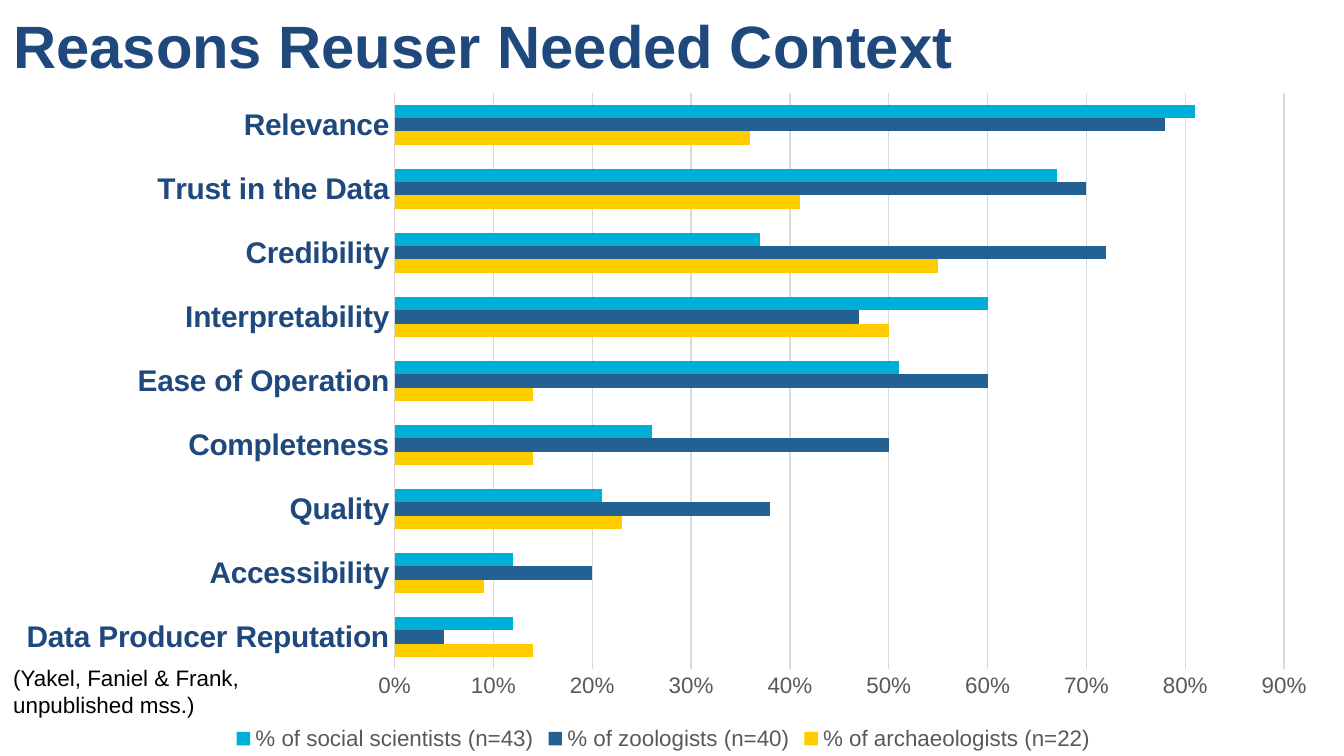
import dataclasses

import pptx
import pptx.chart.data
import pptx.dml.color
import pptx.enum.chart
import pptx.util

Inches = pptx.util.Inches
Pt = pptx.util.Pt

SLIDE_WIDTH = 10
SLIDE_HEIGHT = SLIDE_WIDTH * 9 / 16


@dataclasses.dataclass(frozen=True)
class Theme:
    """Colours, font and type sizes of the slide."""
    font: str = "Arial"
    navy: str = "1F497D"
    black: str = "000000"
    grey: str = "595959"
    rule: str = "D9D9D9"
    yellow: str = "FFCC00"
    blue: str = "236192"
    cyan: str = "00AFD7"
    title: int = 32
    category: int = 16
    small: int = 12
    base: int = 10


THEME = Theme()
REASONS = ["Data Producer Reputation", "Accessibility", "Quality", "Completeness",
           "Ease of Operation", "Interpretability", "Credibility",
           "Trust in the Data", "Relevance"]
GROUPS = [
    ("% of archaeologists (n=22) ", THEME.yellow,
     [0.14, 0.09, 0.23, 0.14, 0.14, 0.5, 0.55, 0.41, 0.36]),
    ("% of zoologists (n=40)", THEME.blue,
     [0.05, 0.2, 0.38, 0.5, 0.6, 0.47, 0.72, 0.7, 0.78]),
    ("% of social scientists (n=43)", THEME.cyan,
     [0.12, 0.12, 0.21, 0.26, 0.51, 0.6, 0.37, 0.67, 0.81]),
]


def rgb(code):
    """Return the colour for a hex code."""
    return pptx.dml.color.RGBColor.from_string(code)


def style_font(font, size, color, bold=False):
    """Apply the theme font with a size, colour and weight."""
    font.name = THEME.font
    font.size = Pt(size)
    font.bold = bold
    font.color.rgb = rgb(color)


def add_text(slide, box, text, size=THEME.small, color=THEME.black, bold=False, wrap=True):
    """Place one formatted paragraph in a box given in inches."""
    frame = slide.shapes.add_textbox(*map(Inches, box)).text_frame
    frame.word_wrap = wrap
    run = frame.paragraphs[0].add_run()
    run.text = text
    style_font(run.font, size, color, bold)


def style_axes(chart):
    """Format the reason axis and the percentage axis."""
    reasons, share = chart.category_axis, chart.value_axis
    for axis in (reasons, share):
        axis.major_tick_mark = pptx.enum.chart.XL_TICK_MARK.NONE
        axis.minor_tick_mark = pptx.enum.chart.XL_TICK_MARK.NONE
    style_font(reasons.tick_labels.font, THEME.category, THEME.navy, bold=True)
    style_font(share.tick_labels.font, THEME.small, THEME.grey)
    share.minimum_scale, share.maximum_scale, share.major_unit = 0, 0.9, 0.1
    share.tick_labels.number_format = "0%"
    share.tick_labels.number_format_is_linked = False
    share.format.line.fill.background()
    share.has_major_gridlines = True
    for line in (reasons.format.line, share.major_gridlines.format.line):
        line.color.rgb = rgb(THEME.rule)
        line.width = Pt(0.75)


def add_reason_chart(slide, box):
    """Draw the clustered bars of reasons by discipline in a box."""
    data = pptx.chart.data.CategoryChartData(number_format="0%")
    data.categories = REASONS
    for name, _, shares in GROUPS:
        data.add_series(name, shares)
    chart = slide.shapes.add_chart(
        pptx.enum.chart.XL_CHART_TYPE.BAR_CLUSTERED, *map(Inches, box), data).chart
    style_font(chart.font, THEME.base, THEME.black)
    chart.has_title = False
    style_axes(chart)

    plot = chart.plots[0]
    plot.gap_width = 182
    plot.overlap = 0
    plot.vary_by_categories = False
    for bars, (_, color, _) in zip(plot.series, GROUPS):
        bars.format.fill.solid()
        bars.format.fill.fore_color.rgb = rgb(color)

    chart.has_legend = True
    chart.legend.position = pptx.enum.chart.XL_LEGEND_POSITION.BOTTOM
    chart.legend.include_in_layout = False
    style_font(chart.legend.font, THEME.small, THEME.grey)


def add_context_slide(deck, box):
    """Lay out the chart, title and citation within a box."""
    slide = deck.slides.add_slide(deck.slide_layouts[6])
    left, top, width, height = box
    add_reason_chart(slide, (left, top + 0.59, width - 0.08, height - 0.59))
    add_text(slide, (left, top + 0.02, 7.25, 0.64), "Reasons Reuser Needed Context",
             size=THEME.title, color=THEME.navy, bold=True, wrap=False)
    add_text(slide, (left, top + 4.89, 2.2, 0.5),
             "(Yakel, Faniel & Frank, unpublished mss.)")


def main():
    """Build and save the deck."""
    deck = pptx.Presentation()
    deck.slide_width, deck.slide_height = Inches(SLIDE_WIDTH), Inches(SLIDE_HEIGHT)
    add_context_slide(deck, (0, 0, SLIDE_WIDTH, SLIDE_HEIGHT))
    deck.save("out.pptx")


if __name__ == "__main__":
    main()
